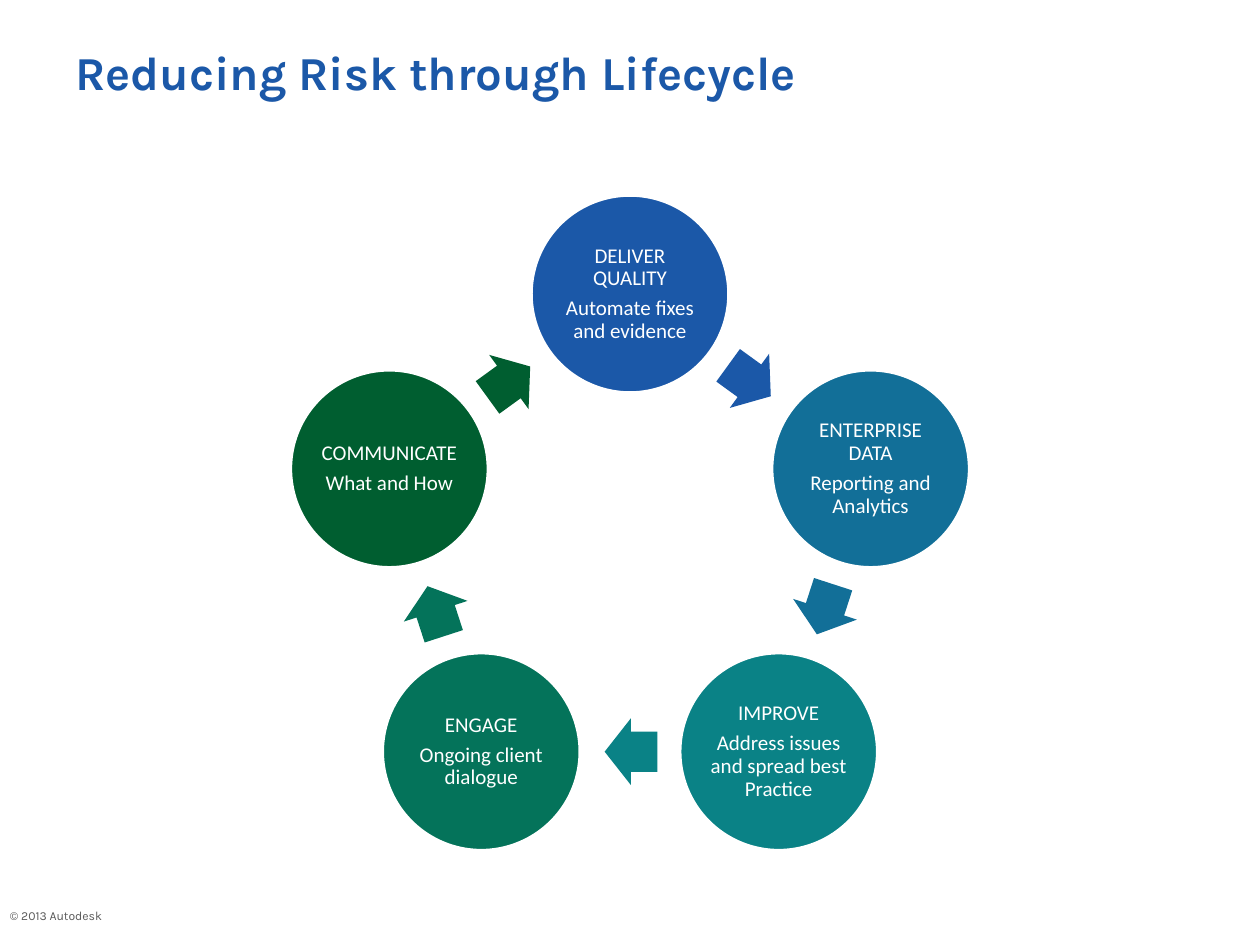
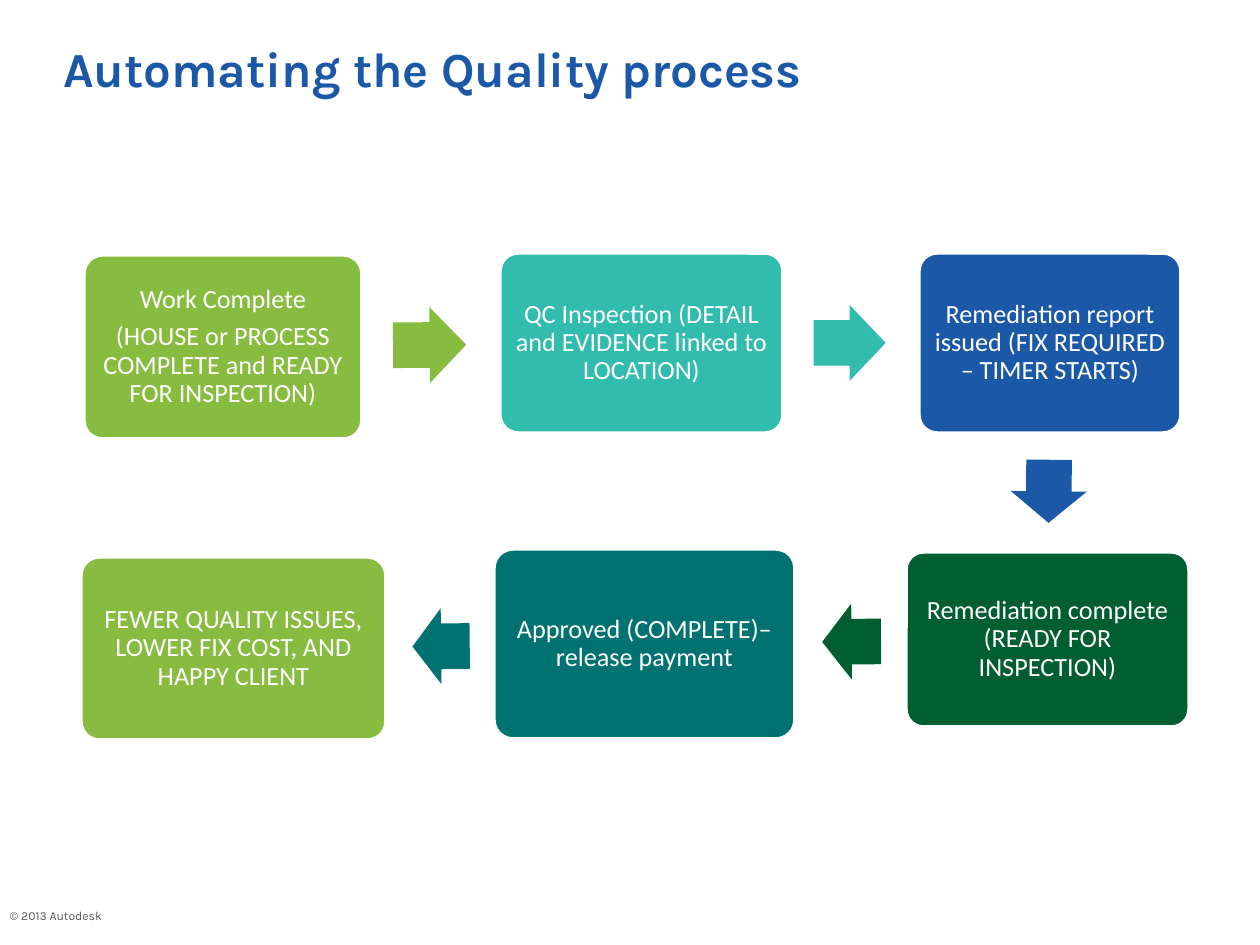
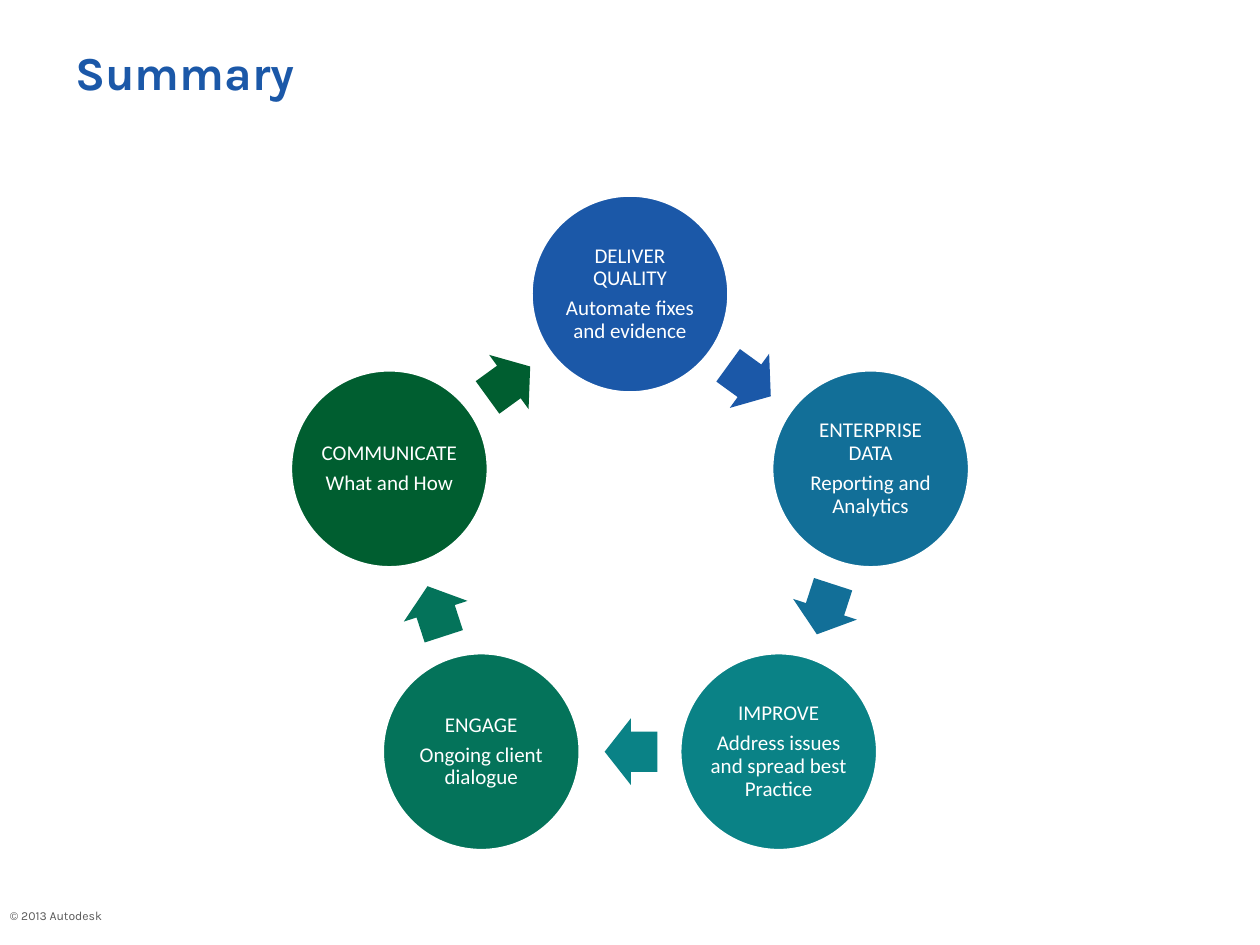
from math import atan2, cos, degrees, hypot, radians, sin

from pptx import Presentation
from pptx.dml.color import RGBColor
from pptx.enum.shapes import MSO_SHAPE
from pptx.enum.text import MSO_ANCHOR, MSO_AUTO_SIZE, PP_ALIGN
from pptx.util import Emu, Pt

WHITE = RGBColor(0xFF, 0xFF, 0xFF)
GREY = RGBColor(0x59, 0x59, 0x59)
BLUE = RGBColor(0x1B, 0x58, 0xA8)
OCEAN = RGBColor(0x12, 0x6F, 0x98)
TEAL = RGBColor(0x0A, 0x82, 0x86)
JADE = RGBColor(0x04, 0x73, 0x5A)
FOREST = RGBColor(0x00, 0x5E, 0x30)
LIME = RGBColor(0x87, 0xBC, 0x40)
AQUA = RGBColor(0x32, 0xBC, 0xAD)
PINE = RGBColor(0x00, 0x72, 0x72)

HEAD_FONT = "Karla"
BODY_FONT = "Calibri"
FOOTER = "© 2013 Autodesk"

LIFECYCLE = [
    (["DELIVER QUALITY", "Automate fixes and evidence"], BLUE),
    (["ENTERPRISE DATA", "Reporting and Analytics"], OCEAN),
    (["IMPROVE", "Address issues and spread best Practice"], TEAL),
    (["ENGAGE", "Ongoing client dialogue"], JADE),
    (["COMMUNICATE", "What and How"], FOREST),
]

PROCESS = [
    (["Work Complete", "(HOUSE or PROCESS COMPLETE and READY FOR INSPECTION)"],
     LIME, (84, 255, 278, 184)),
    (["QC Inspection (DETAIL and EVIDENCE linked to LOCATION)"],
     AQUA, (500, 253, 283, 180)),
    (["Remediation report issued (FIX REQUIRED – TIMER STARTS)"],
     BLUE, (919, 253, 262, 180)),
    (["Remediation complete (READY FOR INSPECTION)"],
     FOREST, (906, 552, 283, 175)),
    (["Approved (COMPLETE)– release payment"],
     PINE, (494, 549, 301, 190)),
    (["FEWER QUALITY ISSUES, LOWER FIX COST, AND HAPPY CLIENT"],
     LIME, (81, 557, 305, 183)),
]

RING_CENTER = (630, 547)
RING_RADIUS = 253
CIRCLE = 198


def px(n):
    return Emu(round(n * 914400 / 126))


def set_insets(tf, x, y):
    tf.margin_left = tf.margin_right = px(x)
    tf.margin_top = tf.margin_bottom = px(y)


def add_run(p, text, font, size, color, bold=False):
    r = p.add_run()
    r.text = text
    r.font.name = font
    r.font.size = Pt(size)
    r.font.bold = bold
    r.font.color.rgb = color


def add_slide(prs, title, size, insets):
    s = prs.slides.add_slide(prs.slide_layouts[5])
    sp = s.shapes.title
    sp.left, sp.top, sp.width, sp.height = map(px, (63, 38, 1134, 157))
    tf = sp.text_frame
    tf.auto_size = MSO_AUTO_SIZE.NONE
    tf.vertical_anchor = MSO_ANCHOR.TOP
    set_insets(tf, *insets)
    p = tf.paragraphs[0]
    p.alignment = PP_ALIGN.LEFT
    add_run(p, title, HEAD_FONT, size, BLUE, True)

    tf = s.shapes.add_textbox(*map(px, (10, 908, 101, 15))).text_frame
    set_insets(tf, 0, 0)
    add_run(tf.paragraphs[0], FOOTER, HEAD_FONT, 7, GREY)
    return s


def add_filled(s, kind, box, color):
    sp = s.shapes.add_shape(kind, *map(px, box))
    sp.shadow.inherit = False
    sp.fill.solid()
    sp.fill.fore_color.rgb = color
    sp.line.fill.background()
    return sp


def add_step(s, kind, box, color, lines, size, inset):
    sp = add_filled(s, kind, box, color)
    sp.line.color.rgb = WHITE
    sp.line.width = Pt(2)
    if kind == MSO_SHAPE.ROUNDED_RECTANGLE:
        sp.adjustments[0] = 0.1
    tf = sp.text_frame
    tf.word_wrap = True
    tf.vertical_anchor = MSO_ANCHOR.MIDDLE
    set_insets(tf, inset, inset)
    for i, line in enumerate(lines):
        p = tf.add_paragraph() if i else tf.paragraphs[0]
        p.alignment = PP_ALIGN.CENTER
        p.line_spacing = 0.9
        p.space_after = Pt(size * 0.35)
        add_run(p, line, BODY_FONT, size, WHITE)


def add_arrow(s, start, end, thickness, color):
    (x1, y1, w1, h1), (x2, y2, w2, h2) = start, end
    cx, cy = x1 + w1 / 2, y1 + h1 / 2
    dx, dy = x2 + w2 / 2 - cx, y2 + h2 / 2 - cy
    distance = hypot(dx, dy)
    reach1, reach2 = (w1 / 2, w2 / 2) if abs(dx) > abs(dy) else (h1 / 2, h2 / 2)
    gap = distance - reach1 - reach2
    along = (reach1 + 0.49 * gap) / distance
    length = 0.53 * gap
    box = (cx + dx * along - length / 2, cy + dy * along - thickness / 2,
           length, thickness)
    sp = add_filled(s, MSO_SHAPE.RIGHT_ARROW, box, color)
    sp.adjustments[0] = 0.6
    sp.adjustments[1] = 0.5
    sp.rotation = round(degrees(atan2(dy, dx)) % 360, 1)


def add_lifecycle(s):
    boxes = []
    for i in range(len(LIFECYCLE)):
        angle = radians(360 / len(LIFECYCLE) * i - 90)
        boxes.append((RING_CENTER[0] + RING_RADIUS * cos(angle) - CIRCLE / 2,
                      RING_CENTER[1] + RING_RADIUS * sin(angle) - CIRCLE / 2,
                      CIRCLE, CIRCLE))
    for i, (lines, color) in enumerate(LIFECYCLE):
        add_step(s, MSO_SHAPE.OVAL, boxes[i], color, lines, 12, 2)
        add_arrow(s, boxes[i], boxes[(i + 1) % len(boxes)], 67, color)


def add_process(s):
    for lines, color, box in PROCESS:
        add_step(s, MSO_SHAPE.ROUNDED_RECTANGLE, box, color, lines, 15, 8)
    for (_, color, start), (_, _, end) in zip(PROCESS, PROCESS[1:]):
        add_arrow(s, start, end, 76, color)


def main():
    prs = Presentation()
    prs.slide_width, prs.slide_height = px(1260), px(945)
    add_lifecycle(add_slide(prs, "Reducing Risk through Lifecycle", 27, (12, 5)))
    add_process(add_slide(prs, "Automating the Quality process", 28, (0, 0)))
    add_lifecycle(add_slide(prs, "Summary", 27, (12, 5)))
    prs.save("out.pptx")


if __name__ == "__main__":
    main()
